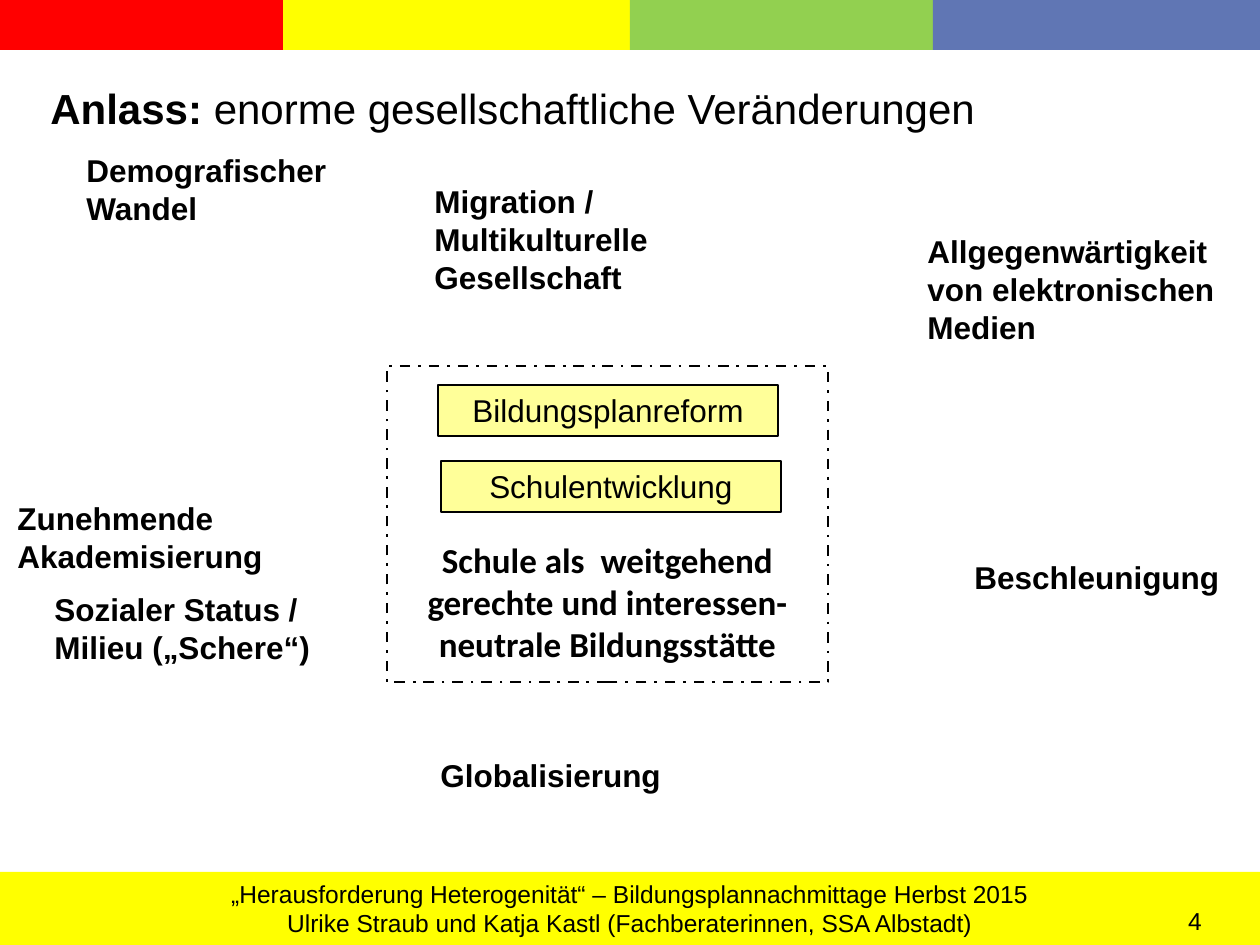
from pptx import Presentation
from pptx.dml.color import RGBColor
from pptx.enum.dml import MSO_LINE
from pptx.enum.shapes import MSO_SHAPE
from pptx.enum.text import MSO_ANCHOR, PP_ALIGN
from pptx.util import Emu, Pt

PX = 914400 / 126
BLACK = RGBColor(0x00, 0x00, 0x00)
WHITE = RGBColor(0xFF, 0xFF, 0xFF)
RED = RGBColor(0xFF, 0x00, 0x00)
YELLOW = RGBColor(0xFF, 0xFF, 0x00)
GREEN = RGBColor(0x92, 0xD0, 0x50)
BLUE = RGBColor(0x60, 0x76, 0xB4)
PALE_YELLOW = RGBColor(0xFF, 0xFF, 0x99)


def px(length):
    return Emu(round(length * PX))


def write(frame, text, size, font="Arial", bold=None, align=PP_ALIGN.LEFT):
    frame.text = text
    for paragraph in frame.paragraphs:
        paragraph.alignment = align
        paragraph.font.name = font
        paragraph.font.size = Pt(size)
        paragraph.font.bold = bold
        paragraph.font.color.rgb = BLACK


def add_box(slide, box, fill, line_width=None):
    shape = slide.shapes.add_shape(MSO_SHAPE.RECTANGLE, *map(px, box))
    shape.shadow.inherit = False
    shape.fill.solid()
    shape.fill.fore_color.rgb = fill
    if line_width:
        shape.line.color.rgb = BLACK
        shape.line.width = Pt(line_width)
    else:
        shape.line.fill.background()
    return shape


def add_label(slide, box, text, size=18, bold=True):
    label = slide.shapes.add_textbox(*map(px, box))
    label.text_frame.word_wrap = True
    write(label.text_frame, text, size, bold=bold)
    return label.text_frame


def add_colour_band(slide, left, top, height):
    for width, colour in ((283, RED), (347, YELLOW), (303, GREEN), (327, BLUE)):
        add_box(slide, (left, top, width, height), colour)
        left += width


def add_footer(slide, left, top, width, height):
    footer = add_box(slide, (left, top, width, height), YELLOW)
    footer.text_frame.word_wrap = False
    footer.text_frame.vertical_anchor = MSO_ANCHOR.MIDDLE
    write(footer.text_frame,
          "„Herausforderung Heterogenität“ – Bildungsplannachmittage Herbst 2015\n"
          "Ulrike Straub und Katja Kastl (Fachberaterinnen, SSA Albstadt)",
          14, align=PP_ALIGN.CENTER)
    page_number = add_label(slide, (left + width - 72, top + 28, 69, 43), "4", 14, False)
    page_number.margin_left = page_number.margin_right = 0


def add_title(slide, box):
    title = add_label(slide, box, "", 24, None)
    title.word_wrap = False
    paragraph = title.paragraphs[0]
    for text, bold in (("Anlass: ", True),
                       ("enorme gesellschaftliche Veränderungen", False)):
        run = paragraph.add_run()
        run.text = text
        run.font.bold = bold


def add_school(slide, left, top, width, height):
    """Dashed frame with the two reform boxes and the goal below them."""
    school = add_box(slide, (left, top, width, height), WHITE, 1.5)
    school.line.dash_style = MSO_LINE.DASH_DOT
    goal = school.text_frame
    goal.word_wrap = True
    goal.vertical_anchor = MSO_ANCHOR.BOTTOM
    goal.margin_bottom = px(17)
    write(goal, "Schule als  weitgehend gerechte und interessen-neutrale Bildungsstätte",
          20, "Calibri", True, PP_ALIGN.CENTER)
    for x, y, text in ((51, 19, "Bildungsplanreform"), (54, 95, "Schulentwicklung")):
        measure = add_box(slide, (left + x, top + y, 340, 51), PALE_YELLOW, 0.75)
        measure.text_frame.word_wrap = True
        measure.text_frame.vertical_anchor = MSO_ANCHOR.TOP
        write(measure.text_frame, text, 18, align=PP_ALIGN.CENTER)


def add_changes(slide):
    changes = (
        ((74, 145, 284, 89), "Demografischer Wandel"),
        ((42, 584, 284, 89), "Sozialer Status /\vMilieu („Schere“)"),
        ((962, 552, 284, 50), "Beschleunigung"),
        ((5, 493, 284, 89), "Zunehmende\vAkademisierung"),
        ((422, 176, 284, 127), "Migration /\vMultikulturelle Gesellschaft"),
        ((915, 226, 345, 127), "Allgegenwärtigkeit von elektronischen Medien"),
        ((428, 750, 246, 50), "Globalisierung"),
    )
    for box, text in changes:
        add_label(slide, box, text)


def main():
    presentation = Presentation()
    presentation.slide_width, presentation.slide_height = px(1260), px(945)
    slide = presentation.slides.add_slide(presentation.slide_layouts[6])
    add_footer(slide, 0, 872, 1260, 73)
    add_colour_band(slide, 0, 0, 50)
    add_school(slide, 387, 366, 441, 316)
    add_changes(slide)
    add_title(slide, (38, 76, 960, 63))
    presentation.save("out.pptx")


if __name__ == "__main__":
    main()
